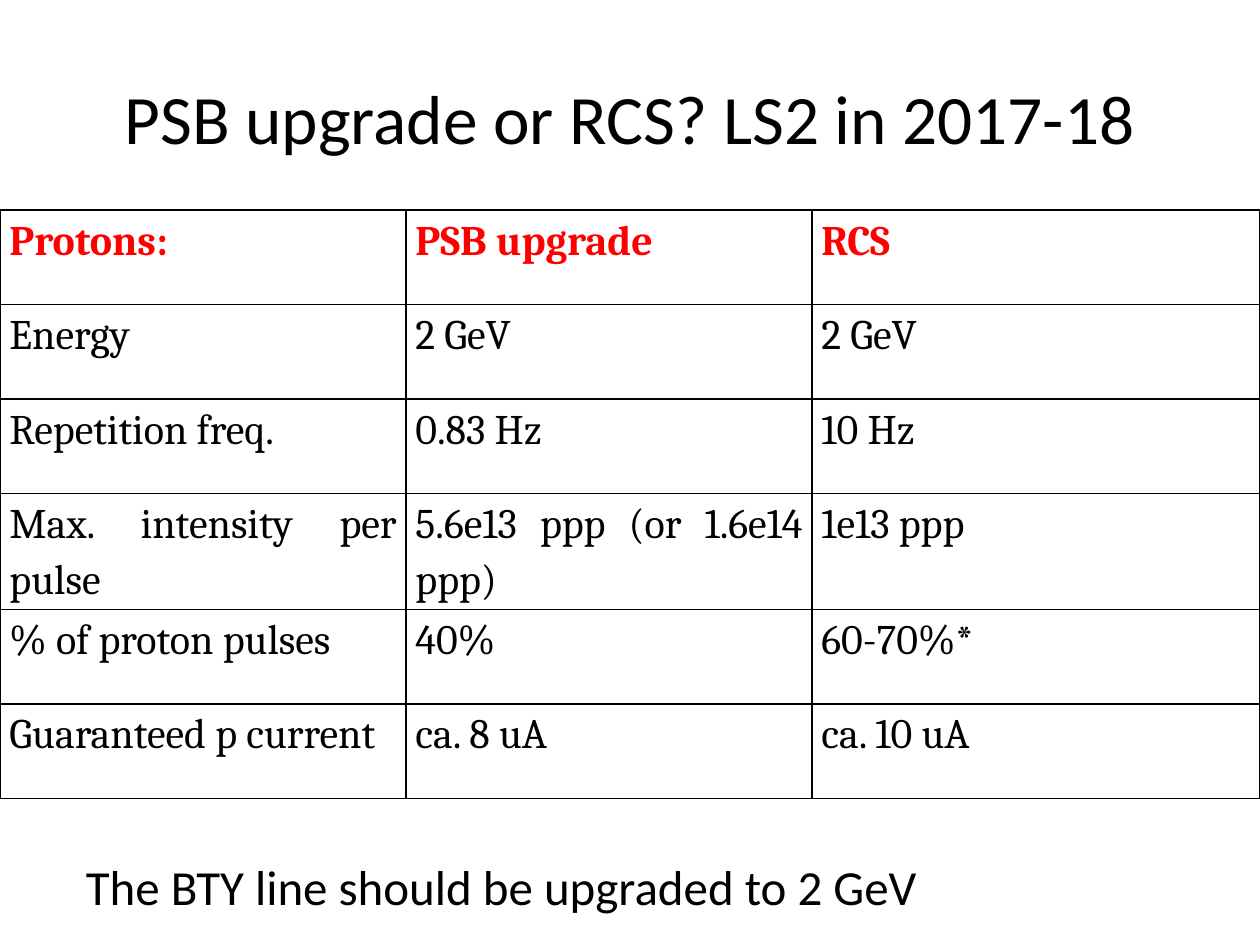
from lxml import etree
from pptx import Presentation
from pptx.dml.color import RGBColor
from pptx.enum.text import MSO_ANCHOR, PP_ALIGN
from pptx.oxml.ns import qn
from pptx.util import Pt

MIDDLE = MSO_ANCHOR.MIDDLE
LEFT, CENTER, JUSTIFY = PP_ALIGN.LEFT, PP_ALIGN.CENTER, PP_ALIGN.JUSTIFY

COLORS = {"text": "000000", "header": "FF0000", "border": "000000"}
COLUMN_WIDTHS = [232, 232, 256]
COMPARISON = [
    ["Protons:", "PSB upgrade ", "RCS"],
    ["Energy", "2 GeV", "2 GeV"],
    ["Repetition freq.", "0.83 Hz", "10 Hz"],
    ["Max. intensity per pulse", "5.6e13 ppp (or 1.6e14 ppp)", "1e13 ppp"],
    ["% of proton pulses", "40%", "60-70%*"],
    ["Guaranteed p current", "ca. 8 uA", "ca. 10 uA"],
]


def write(frame, text, size, font, color="text", bold=False, align=LEFT):
    frame.text = text
    paragraph = frame.paragraphs[0]
    paragraph.alignment = align
    for run in paragraph.runs:
        run.font.size = Pt(size)
        run.font.name = font
        run.font.bold = bold
        run.font.color.rgb = RGBColor.from_string(COLORS[color])
    return paragraph


def add_borders(cell):
    properties = cell._tc.get_or_add_tcPr()
    for position, side in enumerate(("a:lnL", "a:lnR", "a:lnT", "a:lnB")):
        line = etree.Element(qn(side), w=str(Pt(1)))
        fill = etree.SubElement(line, qn("a:solidFill"))
        etree.SubElement(fill, qn("a:srgbClr"), val=COLORS["border"])
        properties.insert(position, line)


def add_line_of_text(slide, box, text, size, align=LEFT, wrap=True):
    frame = slide.shapes.add_textbox(*map(Pt, box)).text_frame
    frame.word_wrap = wrap
    frame.vertical_anchor = MIDDLE
    write(frame, text, size, "Calibri", align=align)


def add_comparison(slide, box):
    table = slide.shapes.add_table(
        len(COMPARISON), len(COLUMN_WIDTHS), *map(Pt, box)
    ).table
    table.horz_banding = False
    for column, width in zip(table.columns, COLUMN_WIDTHS):
        column.width = Pt(width)
    for row_index, values in enumerate(COMPARISON):
        is_header = row_index == 0
        for column_index, value in enumerate(values):
            cell = table.cell(row_index, column_index)
            cell.margin_left = cell.margin_right = Pt(5.4)
            cell.margin_top = cell.margin_bottom = Pt(0)
            cell.fill.background()
            add_borders(cell)
            paragraph = write(
                cell.text_frame, value, 24, "Cambria",
                "header" if is_header else "text", is_header, JUSTIFY,
            )
            paragraph.line_spacing = 1.15
            paragraph.space_after = Pt(6)


def main():
    deck = Presentation()
    deck.slide_width, deck.slide_height = Pt(720), Pt(540)
    slide = deck.slides.add_slide(deck.slide_layouts[6])
    add_line_of_text(slide, (36, 21.6, 648, 90),
                     "PSB upgrade or RCS? LS2 in 2017-18", 39.6, CENTER)
    add_comparison(slide, (0, 120, 720, 324))
    add_line_of_text(slide, (42, 486, 494.6, 41),
                     "The BTY line should be upgraded to 2 GeV", 28, wrap=False)
    deck.save("out.pptx")


if __name__ == "__main__":
    main()
